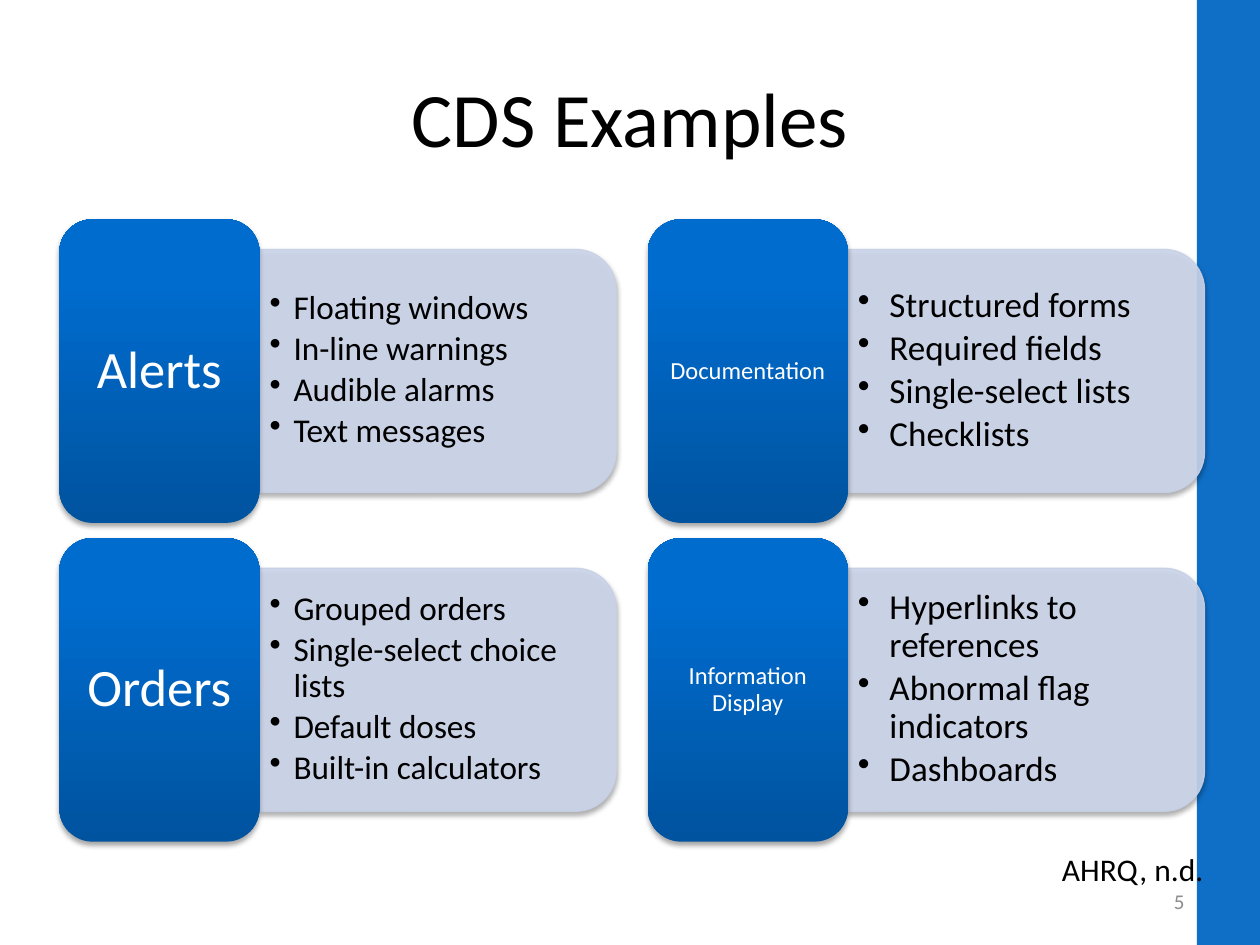
from copy import deepcopy

from lxml import etree
from pptx import Presentation
from pptx.dml.color import RGBColor
from pptx.enum import shapes, text
from pptx.oxml import ns
from pptx.util import Inches, Pt

COLORS = {
    "bar": "0F6FC6", "ink": "000000", "white": "FFFFFF", "number": "8C8C8C",
    "panel": "CCD5EA", "panel_line": "C7D0E6",
    "tab_dark": "00539F", "tab_mid": "006CCE", "tab_light": "006DCF",
}
FONT = "Calibri"
COLUMNS, ROWS = (0.47, 5.14), (1.74, 4.27)
TAB_WIDTH, TAB_HEIGHT = 1.59, 2.41
PANEL_WIDTH, PANEL_HEIGHT = 2.83, 1.93
# Per column: label size, label inset, bullet size, bullet indent
STYLES = ((30, 0.12, 19, 0.19), (14, 0.06, 20, 0.25))
CARDS = (
    (("Alerts", ("Floating windows", "In-line warnings", "Audible alarms", "Text messages")),
     ("Orders", ("Grouped orders", "Single-select choice lists", "Default doses",
                 "Built-in calculators"))),
    (("Documentation", ("Structured forms", "Required fields", "Single-select lists",
                        "Checklists")),
     ("Information Display", ("Hyperlinks to references", "Abnormal flag indicators",
                              "Dashboards"))),
)


def rgb(name):
    return RGBColor.from_string(COLORS[name])


def child(parent, tag, **attributes):
    return etree.SubElement(parent, ns.qn(tag), attributes)


def add_text(para, words, size, color):
    span = para.add_run()
    span.text = words
    span.font.name, span.font.size = FONT, Pt(size)
    span.font.color.rgb = rgb(color)


def add_box(group, left, top, width, height, anchor=text.MSO_ANCHOR.MIDDLE, inset=0.1):
    box = group.add_textbox(Inches(left), Inches(top), Inches(width), Inches(height))
    frame = box.text_frame
    frame.word_wrap, frame.vertical_anchor = True, anchor
    frame.margin_left = frame.margin_right = Inches(inset)
    frame.margin_top = frame.margin_bottom = Inches(inset / 2)
    return frame


def add_shadow(shape):
    shape.shadow.inherit = False
    effects = shape._element.spPr.find(ns.qn("a:effectLst"))
    shadow = child(effects, "a:outerShdw", blurRad=str(Pt(3.1)), dist=str(Pt(1.8)),
                   dir="5400000", rotWithShape="0")
    child(child(shadow, "a:srgbClr", val=COLORS["ink"]), "a:alpha", val="35000")


def add_panel(group, left, top):
    """Light panel: a rectangle with two round corners, turned to face right."""
    shift = (PANEL_WIDTH - PANEL_HEIGHT) / 2
    panel = group.add_shape(shapes.MSO_SHAPE.ROUND_2_SAME_RECTANGLE,
                            Inches(left + shift), Inches(top - shift),
                            Inches(PANEL_HEIGHT), Inches(PANEL_WIDTH))
    panel.rotation = 90
    panel.fill.solid()
    panel.fill.fore_color.rgb = rgb("panel")
    panel.line.color.rgb = rgb("panel_line")
    panel.line.width = Pt(0.75)
    for color in panel._element.spPr.iter(ns.qn("a:srgbClr")):
        child(color, "a:alpha", val="90000")
    add_shadow(panel)


def add_bullets(group, left, top, items, size, indent):
    frame = add_box(group, left, top + 0.09, 2.73, 1.74, inset=0.08)
    for index, item in enumerate(items):
        para = frame.add_paragraph() if index else frame.paragraphs[0]
        properties = para._p.get_or_add_pPr()
        properties.set("marL", str(Inches(indent)))
        properties.set("indent", str(-Inches(indent)))
        child(properties, "a:buChar", char="•")
        para.line_spacing, para.space_after = 0.9, Pt(size * 0.15)
        add_text(para, item, size, "ink")


def add_tab(group, left, top, label, size, inset):
    tab = group.add_shape(shapes.MSO_SHAPE.ROUNDED_RECTANGLE, Inches(left), Inches(top),
                          Inches(TAB_WIDTH), Inches(TAB_HEIGHT))
    tab.fill.gradient()
    tab.fill.gradient_angle = 90
    stop_list = tab._element.spPr.find(".//" + ns.qn("a:gsLst"))
    stop_list.append(deepcopy(stop_list[-1]))
    stops = zip(tab.fill.gradient_stops, (0, 0.8, 1), ("tab_dark", "tab_mid", "tab_light"))
    for stop, position, color in stops:
        stop.position = position
        stop.color.rgb = rgb(color)
    tab.line.fill.background()
    add_shadow(tab)
    # Label inside the rounded corners
    frame = add_box(group, left + 0.08, top + 0.08, TAB_WIDTH - 0.16, TAB_HEIGHT - 0.16,
                    inset=inset)
    para = frame.paragraphs[0]
    para.alignment, para.line_spacing = text.PP_ALIGN.CENTER, 0.9
    add_text(para, label, size, "white")


def add_card(page, left, top, label, items, style):
    label_size, label_inset, bullet_size, indent = style
    group = page.shapes.add_group_shape().shapes
    panel_left = left + TAB_WIDTH
    panel_top = top + (TAB_HEIGHT - PANEL_HEIGHT) / 2
    add_panel(group, panel_left, panel_top)
    add_bullets(group, panel_left, panel_top, items, bullet_size, indent)
    add_tab(group, left, top, label, label_size, label_inset)


def add_side_bar(page, left, top, width, height):
    bar = page.shapes.add_shape(shapes.MSO_SHAPE.RECTANGLE, Inches(left), Inches(top),
                                Inches(width), Inches(height))
    bar.fill.solid()
    bar.fill.fore_color.rgb = rgb("bar")
    bar.line.fill.background()
    bar.shadow.inherit = False


def add_title(page, left, top, width, height):
    title = page.shapes.title
    title.left, title.top = Inches(left), Inches(top)
    title.width, title.height = Inches(width), Inches(height)
    title.text_frame.vertical_anchor = text.MSO_ANCHOR.MIDDLE
    para = title.text_frame.paragraphs[0]
    para.alignment = text.PP_ALIGN.CENTER
    add_text(para, "CDS Examples", 44, "ink")


def add_footer(page):
    number = add_box(page.shapes, 7.17, 6.95, 2.33, 0.4).paragraphs[0]
    number.alignment = text.PP_ALIGN.RIGHT
    add_text(number, "5", 12, "number")
    citation = add_box(page.shapes, 8.33, 6.7, 1.42, 0.4, text.MSO_ANCHOR.TOP)
    add_text(citation.paragraphs[0], "AHRQ, n.d.", 18, "ink")


def main():
    deck = Presentation()
    deck.slide_width, deck.slide_height = Inches(10), Inches(7.5)
    page = deck.slides.add_slide(deck.slide_layouts[5])
    add_side_bar(page, 9.5, 0, 0.5, 7.5)
    add_title(page, 0.5, 0.3, 9, 1.25)
    add_footer(page)
    # Two columns of cards
    for left, style, column in zip(COLUMNS, STYLES, CARDS):
        for top, (label, items) in zip(ROWS, column):
            add_card(page, left, top, label, items, style)
    deck.save("out.pptx")


if __name__ == "__main__":
    main()
